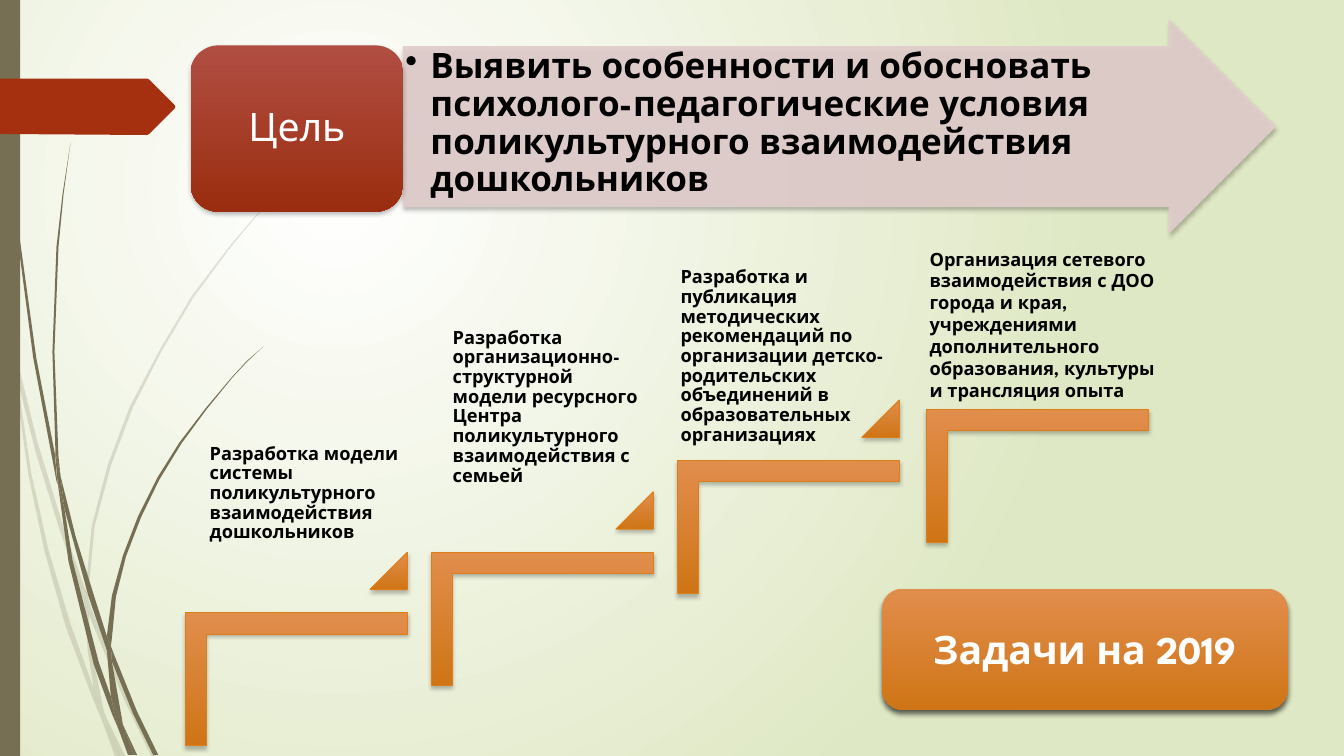
from lxml import etree
from pptx import Presentation
from pptx import util as u
from pptx.dml.color import RGBColor
from pptx.enum import shapes, text
from pptx.oxml.ns import qn

WHITE = RGBColor(0xFF, 0xFF, 0xFF)
BLACK = RGBColor(0, 0, 0)
PALE_GREEN = RGBColor(0xDF, 0xE8, 0xC4)
OLIVE = RGBColor(0x76, 0x6F, 0x54)
RUST = RGBColor(0xA5, 0x30, 0x10)
PINK = RGBColor(0xE1, 0xCD, 0xCC)
RED_GRADIENT = (RGBColor(0xB1, 0x4E, 0x43), RGBColor(0x9A, 0x2D, 0x0F))
ORANGE_GRADIENT = (RGBColor(0xE1, 0x8D, 0x4C), RGBColor(0xCF, 0x75, 0x16))
ORANGE_LINE = RGBColor(0xDE, 0x7E, 0x18)

SOFT_SHADOW = (25, 3, 2)    # opacity %, blur pt, distance pt
STRONG_SHADOW = (60, 4, 3)
KIND = shapes.MSO_SHAPE
ALIGN = text.PP_ALIGN
ANCHOR = text.MSO_ANCHOR

# Outlines of the grass blades, in inches
FAINT_BLADES = [
    [(.11, 3.5), (.09, 3.22), (0, 2.82), (0, 2.99), (.1, 3.44)],
    [(.58, 5.22), (.84, 5.99), (.85, 5.86), (.62, 5.2), (.37, 4.38), (.14, 3.45), (.17, 3.76), (.36, 4.51)],
    [(.92, 6.07), (.88, 5.96), (.88, 6.1), (1.23, 6.94), (1.5, 7.5), (1.55, 7.5), (1.27, 6.92)],
    [(1.19, 7.5), (1.24, 7.5), (1.05, 7.11)],
    [(.93, 6.83), (.7, 6.19), (.48, 5.45), (.31, 4.69), (.17, 3.76), (.11, 3.5), (.28, 4.7), (.44, 5.46),
     (.65, 6.21), (.92, 6.93), (1.01, 7.14), (.99, 7.07)],
    [(.84, 5.99), (.87, 6.46), (.93, 6.83), (.96, 6.92), (1.05, 7.11), (1.03, 7.06), (.91, 6.46),
     (.88, 6.1), (.88, 6.08)],
    [(.88, 5.84), (.94, 5.22), (1.1, 4.62), (1.32, 4.04), (1.6, 3.49), (1.92, 2.95), (2.29, 2.45),
     (2.68, 1.98), (2.9, 1.75), (3.12, 1.54), (3.12, 1.53), (2.89, 1.75), (2.68, 1.97), (2.28, 2.44),
     (1.9, 2.94), (1.58, 3.48), (1.29, 4.03), (1.07, 4.61), (.91, 5.22), (.85, 5.84), (.85, 5.86), (.88, 5.96)],
    [(1.01, 7.14), (1.14, 7.5), (1.19, 7.5)],
    [(.88, 6.08), (.88, 5.96), (.85, 5.86), (.84, 5.99)],
    [(.96, 6.92), (.93, 6.83), (.99, 7.07), (1.01, 7.14), (1.19, 7.5), (1.05, 7.11)],
]
DARK_BLADES = [
    [(.07, 1.1), (.17, 2.33), (.33, 3.55), (.56, 4.77), (.57, 4.81), (.55, 4.57), (.55, 4.53), (.36, 3.55),
     (.19, 2.32), (.08, 1.09), (.05, .48), (.04, 0), (.03, 0), (.04, .48)],
    [(.88, 5.92), (1.06, 6.45), (1.06, 6.31), (.93, 5.9), (.75, 5.32), (.6, 4.72), (.64, 5.05)],
    [(1.13, 6.49), (1.1, 6.41), (1.11, 6.56), (1.32, 7.08), (1.52, 7.49), (1.57, 7.49), (1.36, 7.06)],
    [(1.1, 6.91), (.98, 6.57), (.72, 5.56), (.64, 5.05), (.57, 4.77), (.68, 5.57), (.93, 6.59), (1.11, 7.08),
     (1.17, 7.22), (1.16, 7.17)],
    [(.6, 4.72), (.58, 4.53), (.54, 3.49), (.58, 2.45), (.63, 1.93), (.7, 1.41), (.62, 1.93), (.56, 2.45),
     (.52, 3.49), (.55, 4.49)],
    [(1.33, 7.49), (1.36, 7.49), (1.22, 7.19)],
    [(.57, 4.77), (.64, 5.05), (.6, 4.72), (.55, 4.49), (.55, 4.53)],
    [(1.11, 6.33), (1.15, 5.92), (1.25, 5.52), (1.4, 5.13), (1.58, 4.76), (1.8, 4.4), (2.05, 4.06),
     (2.31, 3.74), (2.45, 3.59), (2.61, 3.44), (2.45, 3.58), (2.31, 3.73), (2.04, 4.05), (1.78, 4.39),
     (1.56, 4.74), (1.37, 5.12), (1.22, 5.51), (1.11, 5.91), (1.06, 6.31), (1.1, 6.41)],
    [(1.17, 7.22), (1.27, 7.49), (1.31, 7.49)],
    [(1.06, 6.45), (1.1, 6.91), (1.16, 7.06), (1.22, 7.19), (1.11, 6.56), (1.09, 6.51)],
    [(1.06, 6.45), (1.11, 6.56), (1.1, 6.41), (1.06, 6.31)],
    [(1.16, 7.06), (1.1, 6.91), (1.17, 7.22), (1.3, 7.49), (1.33, 7.49), (1.22, 7.19)],
]
TAG = [(0, .78), (1.46, .78), (1.48, .79), (1.73, 1.04), (1.74, 1.06), (1.73, 1.08), (1.48, 1.33),
       (1.46, 1.34), (0, 1.33)]

# Corner left and top, text box, line spacing, wording
STEPS = [
    (1.84, 6.08, (2.03, 4.36, 2.01, 1.2), .9,
     "Разработка модели системы поликультурного взаимодействия дошкольников"),
    (4.28, 5.48, (4.44, 3.21, 2.02, 1.74), .9,
     "Разработка организационно-структурной модели ресурсного Центра поликультурного взаимодействия с семьей"),
    (6.72, 4.57, (6.7, 2.61, 2.3, 1.9), .9,
     "Разработка и публикация методических рекомендаций по организации "
     "детско-родительских объединений в образовательных организациях"),
    (9.19, 4.06, (9.17, 2.41, 2.47, 1.56), 1,
     "Организация сетевого взаимодействия с ДОО города и края, учреждениями дополнительного "
     "образования, культуры и трансляция опыта"),
]


class SlideBuilder:
    font = "League Spartan"

    def __init__(self, prs):
        self.s = prs.slides.add_slide(prs.slide_layouts[6])

    def gradient(self, fill, colors):
        fill.gradient()
        for stop, color in zip(fill.gradient_stops, colors):
            stop.color.rgb = color

    def background(self, colors):
        fill = self.s.background.fill
        self.gradient(fill, colors)
        lin = next(self.s.element.iter(qn("a:lin")))
        circle = etree.Element(qn("a:path"), {"path": "circle"})
        rect = {"l": "50000", "t": "50000", "r": "100000", "b": "100000"}
        etree.SubElement(circle, qn("a:fillToRect"), rect)
        lin.getparent().replace(lin, circle)

    def paint(self, sp, fill, line=None, opacity=100, shadow=None):
        if isinstance(fill, tuple) and not isinstance(fill, RGBColor):
            self.gradient(sp.fill, fill)
            sp.fill.gradient_angle = 270
            sp._element.spPr.find(qn("a:gradFill")).set("rotWithShape", "0")
        else:
            sp.fill.solid()
            sp.fill.fore_color.rgb = fill
        if line is None:
            sp.line.fill.background()
        else:
            sp.line.color.rgb = line
            sp.line.width = u.Pt(.75)
        if opacity < 100:
            for color in sp._element.spPr.iter(qn("a:srgbClr")):
                etree.SubElement(color, qn("a:alpha"), val=str(opacity * 1000))
        sp.shadow.inherit = False
        if shadow:
            alpha, blur, dist = shadow
            effects = sp._element.spPr.find(qn("a:effectLst"))
            outer = etree.SubElement(effects, qn("a:outerShdw"), blurRad=str(u.Pt(blur)),
                                     dist=str(u.Pt(dist)), dir="5400000", rotWithShape="0")
            color = etree.SubElement(outer, qn("a:srgbClr"), val=str(BLACK))
            etree.SubElement(color, qn("a:alpha"), val=str(alpha * 1000))

    def shape(self, kind, box, fill, adj=(), rotation=0, **style):
        sp = self.s.shapes.add_shape(kind, *map(u.Inches, box))
        for i, value in enumerate(adj):
            sp.adjustments[i] = value
        sp.rotation = rotation
        self.paint(sp, fill, **style)
        return sp

    def outline(self, points, fill, **style):
        pts = [(u.Inches(x), u.Inches(y)) for x, y in points]
        fb = self.s.shapes.build_freeform(*pts[0], scale=1.0)
        fb.add_line_segments(pts[1:], close=True)
        self.paint(fb.convert_to_shape(), fill, **style)

    def put_text(self, sp, words, size, color, bold=False, align=ALIGN.LEFT, anchor=ANCHOR.TOP,
                 spacing=1.0, inset=.05):
        tf = sp.text_frame
        m = u.Inches(inset)
        frame = {"word_wrap": True, "vertical_anchor": anchor, "margin_left": m, "margin_right": m,
                 "margin_top": m, "margin_bottom": m}
        p = tf.paragraphs[0]
        r = p.add_run()
        r.text = words
        r.font.color.rgb = color
        for obj, values in ((tf, frame), (p, {"alignment": align, "line_spacing": spacing}),
                            (r.font, {"name": self.font, "size": u.Pt(size), "bold": bold})):
            for name, value in values.items():
                setattr(obj, name, value)
        return p

    def label(self, box, words, size, color, **style):
        return self.put_text(self.s.shapes.add_textbox(*map(u.Inches, box)), words, size, color, **style)

    def bullet(self, p, indent):
        pPr = p._p.get_or_add_pPr()
        pPr.set("marL", str(u.Inches(indent)))
        pPr.set("indent", str(-u.Inches(indent)))
        etree.SubElement(pPr, qn("a:buChar"), char="•")


def main():
    prs = Presentation()
    prs.slide_width, prs.slide_height = u.Inches(13.33), u.Inches(7.5)
    b = SlideBuilder(prs)

    # Backdrop
    b.background((WHITE, PALE_GREEN))
    for blades, opacity in ((FAINT_BLADES, 20), (DARK_BLADES, 100)):
        for points in blades:
            b.outline(points, OLIVE, opacity=opacity)
    b.shape(KIND.RECTANGLE, (0, 0, .2, 7.5), OLIVE)
    b.outline(TAG, RUST)

    # Goal
    b.shape(KIND.RIGHT_ARROW, (4, .2, 8.65, 2.11), PINK, adj=(.75, .5), line=PINK, opacity=90,
            shadow=SOFT_SHADOW)
    p = b.label((4, .46, 7.86, 1.58), "Выявить особенности и обосновать психолого-педагогические условия "
                "поликультурного взаимодействия дошкольников", 25, BLACK, bold=True, spacing=.9, inset=.02)
    b.bullet(p, .25)
    goal = b.shape(KIND.ROUNDED_RECTANGLE, (1.89, .45, 2.11, 1.65), RED_GRADIENT, shadow=SOFT_SHADOW)
    b.put_text(goal, "Цель", 28, WHITE, align=ALIGN.CENTER, anchor=ANCHOR.MIDDLE, spacing=.9)

    # Rising steps: each corner is turned a quarter, with a triangle towards the next step
    orange = {"fill": ORANGE_GRADIENT, "line": ORANGE_LINE, "shadow": SOFT_SHADOW}
    w, h = 1.32, 2.2
    turn = (h - w) / 2
    for i, (left, top, box, spacing, words) in enumerate(STEPS):
        b.shape(KIND.CORNER, (left + turn, top - turn, w, h), adj=(.16, .16), rotation=90, **orange)
        b.label(box, words, 13, BLACK, bold=True, spacing=spacing)
        if i < len(STEPS) - 1:
            b.shape(KIND.ISOSCELES_TRIANGLE, (left + 1.83, top - .6, .37, .37), adj=(1,), **orange)

    # Tasks
    tasks = b.shape(KIND.ROUNDED_RECTANGLE, (8.75, 5.84, 4.02, 1.2), ORANGE_GRADIENT, shadow=STRONG_SHADOW)
    b.put_text(tasks, "Задачи на 2019", 28, WHITE, bold=True, align=ALIGN.CENTER, anchor=ANCHOR.MIDDLE)

    prs.save("out.pptx")


if __name__ == "__main__":
    main()
